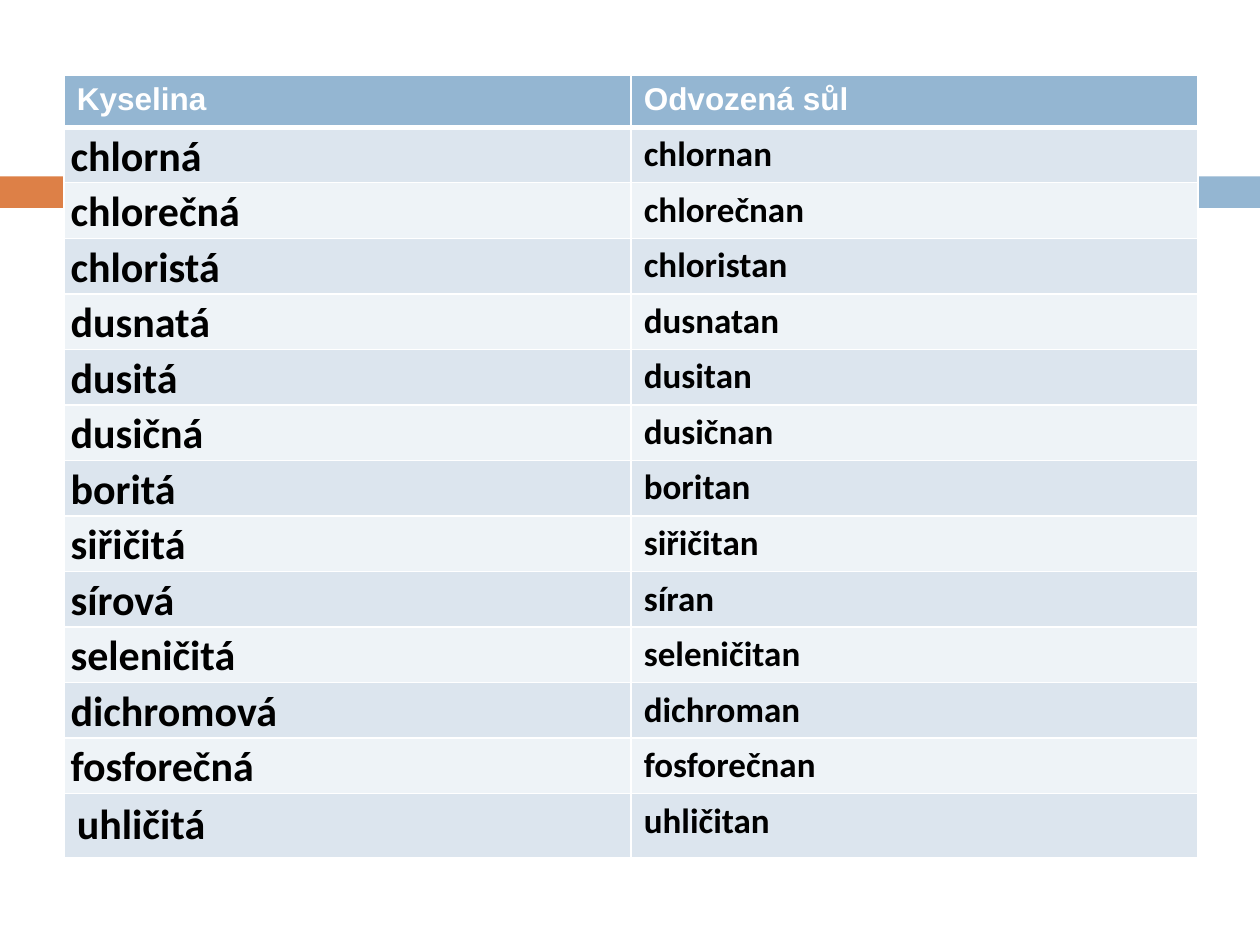
from dataclasses import dataclass
from typing import NamedTuple

from lxml.etree import SubElement
from pptx import Presentation
from pptx.dml.color import RGBColor as RGB
from pptx.enum.shapes import MSO_SHAPE as Shape
from pptx.enum.text import MSO_ANCHOR as Anchor
from pptx.oxml.ns import qn
from pptx.util import Inches, Pt


@dataclass(frozen=True)
class Theme:
    accent: RGB = RGB(0xDD, 0x80, 0x47)
    header: RGB = RGB(0x94, 0xB6, 0xD2)
    bands: tuple = (RGB(0xDC, 0xE5, 0xEE), RGB(0xEE, 0xF3, 0xF7))
    light: RGB = RGB(0xFF, 0xFF, 0xFF)
    dark: RGB = RGB(0, 0, 0)
    header_font: str = "Arial"
    body_font: str = "Calibri"
    header_size: int = 18
    acid_size: int = 24
    salt_size: int = 20
    grid_line: float = 1
    header_line: float = 3


class Bar(NamedTuple):
    left: float
    width: float
    color: RGB


class TextStyle(NamedTuple):
    font: str
    size: int
    color: RGB


class Pair(NamedTuple):
    acid: str
    salt: str


THEME = Theme()
HEADER_STYLE = TextStyle(THEME.header_font, THEME.header_size, THEME.light)
ACID_STYLE = TextStyle(THEME.body_font, THEME.acid_size, THEME.dark)
SALT_STYLE = TextStyle(THEME.body_font, THEME.salt_size, THEME.dark)

BARS = [Bar(0, 0.58, THEME.accent), Bar(0.65, 9.35, THEME.header)]
HEADINGS = Pair("Kyselina", "Odvozená sůl")
PAIRS = [
    Pair("chlorná", "chlornan"),
    Pair("chlorečná", "chlorečnan"),
    Pair("chloristá", "chloristan"),
    Pair("dusnatá", "dusnatan"),
    Pair("dusitá", "dusitan"),
    Pair("dusičná", "dusičnan"),
    Pair("boritá", "boritan"),
    Pair("siřičitá", "siřičitan"),
    Pair("sírová", "síran"),
    Pair("seleničitá", "seleničitan"),
    Pair("dichromová", "dichroman"),
    Pair("fosforečná", "fosforečnan"),
    Pair("uhličitá", "uhličitan"),
]
ROW_HEIGHT = 0.41
COLUMN_WIDTH = 4.5


def draw_bar(slide, bar: Bar) -> None:
    strip = slide.shapes.add_shape(
        Shape.RECTANGLE, Inches(bar.left), Inches(1.4), Inches(bar.width), Inches(0.25))
    strip.shadow.inherit = False
    strip.fill.solid()
    strip.fill.fore_color.rgb = bar.color
    strip.line.fill.background()


def set_borders(cell, top: float, bottom: float) -> None:
    """Put border lines ahead of the cell's fill, as the schema requires."""
    properties = cell._tc.get_or_add_tcPr()
    widths = {"lnL": THEME.grid_line, "lnR": THEME.grid_line, "lnT": top, "lnB": bottom}
    for position, (side, width) in enumerate(widths.items()):
        line = SubElement(properties, qn(f"a:{side}"), w=str(Pt(width)))
        paint = SubElement(line, qn("a:solidFill"))
        SubElement(paint, qn("a:srgbClr"), val=str(THEME.light))
        properties.insert(position, line)


def fill_cell(cell, text: str, style: TextStyle, color: RGB) -> None:
    cell.fill.solid()
    cell.fill.fore_color.rgb = color
    run = cell.text_frame.paragraphs[0].add_run()
    run.text = text
    run.font.name = style.font
    run.font.size = Pt(style.size)
    run.font.bold = True
    run.font.color.rgb = style.color


def tighten(cell) -> None:
    cell.vertical_anchor = Anchor.BOTTOM
    cell.margin_left = cell.margin_right = Inches(0.05)
    cell.margin_top = cell.margin_bottom = 0


def draw_table(slide, headings: Pair, pairs: list[Pair]) -> None:
    count = len(pairs) + 1
    table = slide.shapes.add_table(
        count, 2, Inches(0.51), Inches(0.6),
        Inches(2 * COLUMN_WIDTH), Inches(count * ROW_HEIGHT)).table
    for column in table.columns:
        column.width = Inches(COLUMN_WIDTH)
    for row in table.rows:
        row.height = Inches(ROW_HEIGHT)

    for cell, heading in zip(table.rows[0].cells, headings):
        fill_cell(cell, heading, HEADER_STYLE, THEME.header)
        set_borders(cell, THEME.grid_line, THEME.header_line)
    for index, pair in enumerate(pairs):
        cells = list(table.rows[index + 1].cells)
        top = THEME.grid_line if index else THEME.header_line
        for cell, text, style in zip(cells, pair, (ACID_STYLE, SALT_STYLE)):
            fill_cell(cell, text, style, THEME.bands[index % 2])
            set_borders(cell, top, THEME.grid_line)
        if pair is not pairs[-1]:
            tighten(cells[0])


def main() -> None:
    deck = Presentation()
    deck.slide_width, deck.slide_height = Inches(10), Inches(7.5)
    slide = deck.slides.add_slide(deck.slide_layouts[6])
    for bar in BARS:
        draw_bar(slide, bar)
    draw_table(slide, HEADINGS, PAIRS)
    deck.save("out.pptx")


if __name__ == "__main__":
    main()
